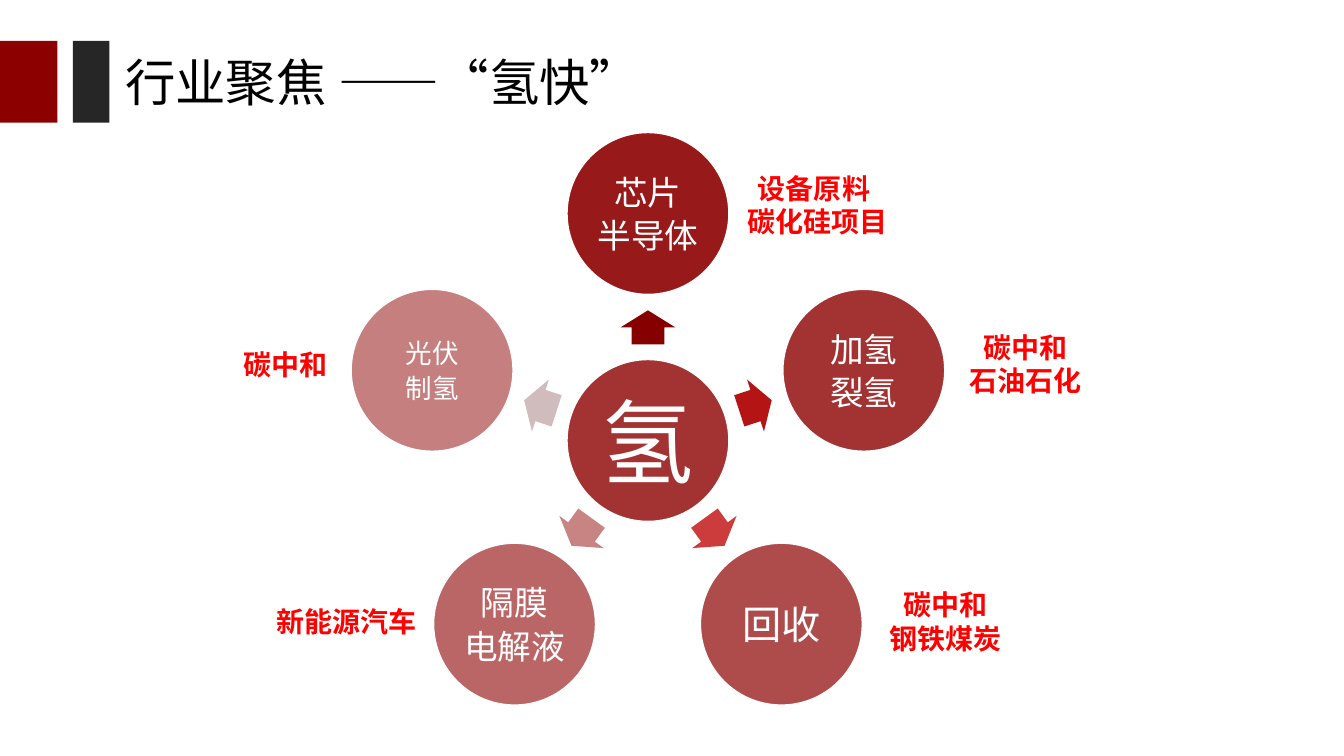
import math

import pptx
import pptx.dml.color
import pptx.enum.lang
import pptx.enum.shapes
import pptx.enum.text
import pptx.oxml
import pptx.oxml.ns
import pptx.util
from pptx.util import Cm

SHAPE = pptx.enum.shapes.MSO_SHAPE
ALIGN = pptx.enum.text.PP_ALIGN
ANCHOR = pptx.enum.text.MSO_ANCHOR
CHINESE = pptx.enum.lang.MSO_LANGUAGE_ID.SIMPLIFIED_CHINESE


def rgb(value):
    return pptx.dml.color.RGBColor.from_string(value)


class Deck:
    """Holds the style and the current slide."""

    font = "Noto Sans CJK SC"
    dark_red = "8D0000"
    white = "FFFFFF"

    def __init__(self):
        self.prs = pptx.Presentation()
        self.prs.slide_width = Cm(33.87)
        self.prs.slide_height = Cm(19.05)
        self.s = self.prs.slides.add_slide(self.prs.slide_layouts[5])

    def set_text(self, tf, lines, size, color, align, bold=False, gap=0):
        tf.word_wrap = True
        tf.auto_size = pptx.enum.text.MSO_AUTO_SIZE.NONE
        for i, line in enumerate(lines):
            p = tf.paragraphs[0] if i == 0 else tf.add_paragraph()
            r = p.add_run()
            r.text = line
            r.font.language_id = CHINESE
            p.alignment = align
            p.space_before = pptx.util.Pt(0)
            p.space_after = pptx.util.Pt(gap)
            p.font.size = pptx.util.Pt(size)
            p.font.bold = bold
            p.font.name = self.font
            p.font.color.rgb = rgb(color)
            ea = pptx.oxml.parse_xml(
                f'<a:ea {pptx.oxml.ns.nsdecls("a")} typeface="{self.font}"/>')
            p.font._element.find(pptx.oxml.ns.qn("a:latin")).addnext(ea)

    def title(self, text, left, top, width, height):
        sp = self.s.shapes.title
        sp.left, sp.top, sp.width, sp.height = map(Cm, (left, top, width, height))
        sp.text_frame.vertical_anchor = ANCHOR.MIDDLE
        self.set_text(sp.text_frame, [text], 36, "000000", ALIGN.LEFT)

    def shape(self, kind, left, top, width, height, fill):
        sp = self.s.shapes.add_shape(kind, *map(Cm, (left, top, width, height)))
        sp.shadow.inherit = False
        sp.fill.solid()
        sp.fill.fore_color.rgb = rgb(fill)
        sp.line.fill.background()
        return sp

    def circle(self, x, y, diameter, lines, size, opacity):
        """Draw a translucent disc centred on x, y with its text inside."""
        sp = self.shape(SHAPE.OVAL, x - diameter / 2, y - diameter / 2,
                        diameter, diameter, self.dark_red)
        color = sp.fill._xPr.find(".//" + pptx.oxml.ns.qn("a:srgbClr"))
        color.append(pptx.oxml.parse_xml(
            f'<a:alpha {pptx.oxml.ns.nsdecls("a")} val="{opacity * 1000}"/>'))
        sp.line.color.rgb = rgb(self.white)
        sp.line.width = pptx.util.Pt(1)
        tf = sp.text_frame
        tf.margin_left = tf.margin_right = Cm(0.08)
        tf.margin_top = tf.margin_bottom = Cm(0.08)
        tf.vertical_anchor = ANCHOR.MIDDLE
        self.set_text(tf, lines, size, self.white, ALIGN.CENTER, gap=round(size * 0.1))

    def arrow(self, x, y, angle, fill):
        width, height = 0.86, 1.38
        sp = self.shape(SHAPE.RIGHT_ARROW, x - width / 2, y - height / 2,
                        width, height, fill)
        sp.adjustments[0] = 0.6
        sp.adjustments[1] = 0.5
        sp.rotation = angle % 360

    def label(self, lines, left, top, width):
        height = 1.12 if len(lines) == 1 else 1.96
        sp = self.s.shapes.add_textbox(*map(Cm, (left, top, width, height)))
        self.set_text(sp.text_frame, lines, 20, "FF0000", ALIGN.CENTER, bold=True)


def main():
    deck = Deck()
    deck.shape(SHAPE.RECTANGLE, 0, 1.03, 1.45, 2.06, deck.dark_red)
    deck.shape(SHAPE.RECTANGLE, 1.84, 1.03, 0.92, 2.06, "262626")
    deck.title("行业聚焦 ——“氢快”", 2.9, 1.14, 21.18, 1.8)

    center_x, center_y, diameter = 16.33, 11.1, 4.08
    ring, arrow_ring = 5.72, 2.85
    deck.circle(center_x, center_y, diameter, ["氢"], 66, 80)

    # Clockwise from the top: text, size, opacity, arrow colour
    fields = [
        (["芯片", "半导体"], 24, 90, "870000"),
        (["加氢", "裂氢"], 24, 80, "B41414"),
        (["回收"], 28, 70, "CD3C3C"),
        (["隔膜", "电解液"], 24, 60, "C88383"),
        (["光伏", "制氢"], 19, 50, "D0BCBC"),
    ]
    for i, (lines, size, opacity, fill) in enumerate(fields):
        angle = -90 + i * 360 / len(fields)
        dx, dy = math.cos(math.radians(angle)), math.sin(math.radians(angle))
        deck.arrow(center_x + arrow_ring * dx, center_y + arrow_ring * dy, angle, fill)
        deck.circle(center_x + ring * dx, center_y + ring * dy, diameter,
                    lines, size, opacity)

    for lines, left, top, width in [
        (["设备原料 ", "碳化硅项目"], 18.36, 4.19, 4.47),
        (["碳中和", "石油石化"], 23.83, 8.2, 4.04),
        (["碳中和", "钢铁煤炭"], 21.97, 14.68, 3.71),
        (["新能源汽车"], 6.65, 15.11, 4.17),
        (["碳中和"], 5.77, 8.64, 2.84),
    ]:
        deck.label(lines, left, top, width)

    deck.prs.save("out.pptx")


if __name__ == "__main__":
    main()
